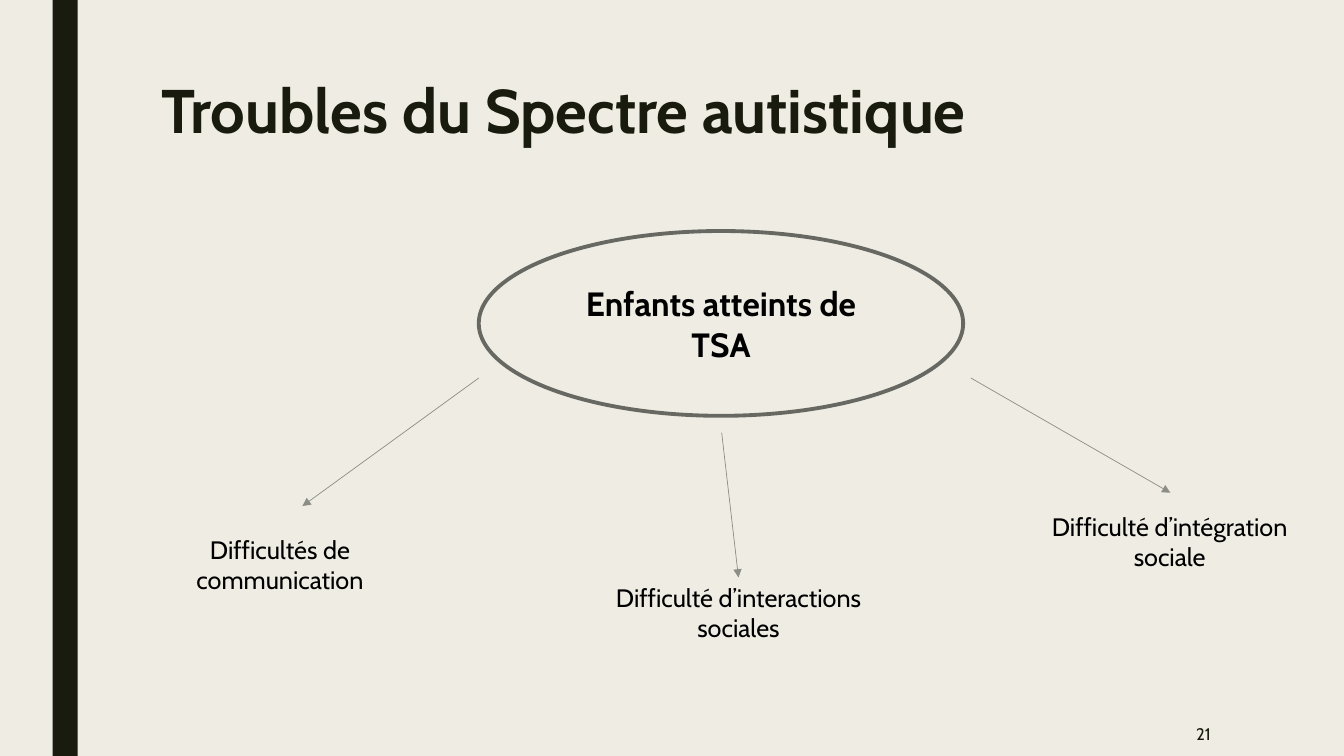
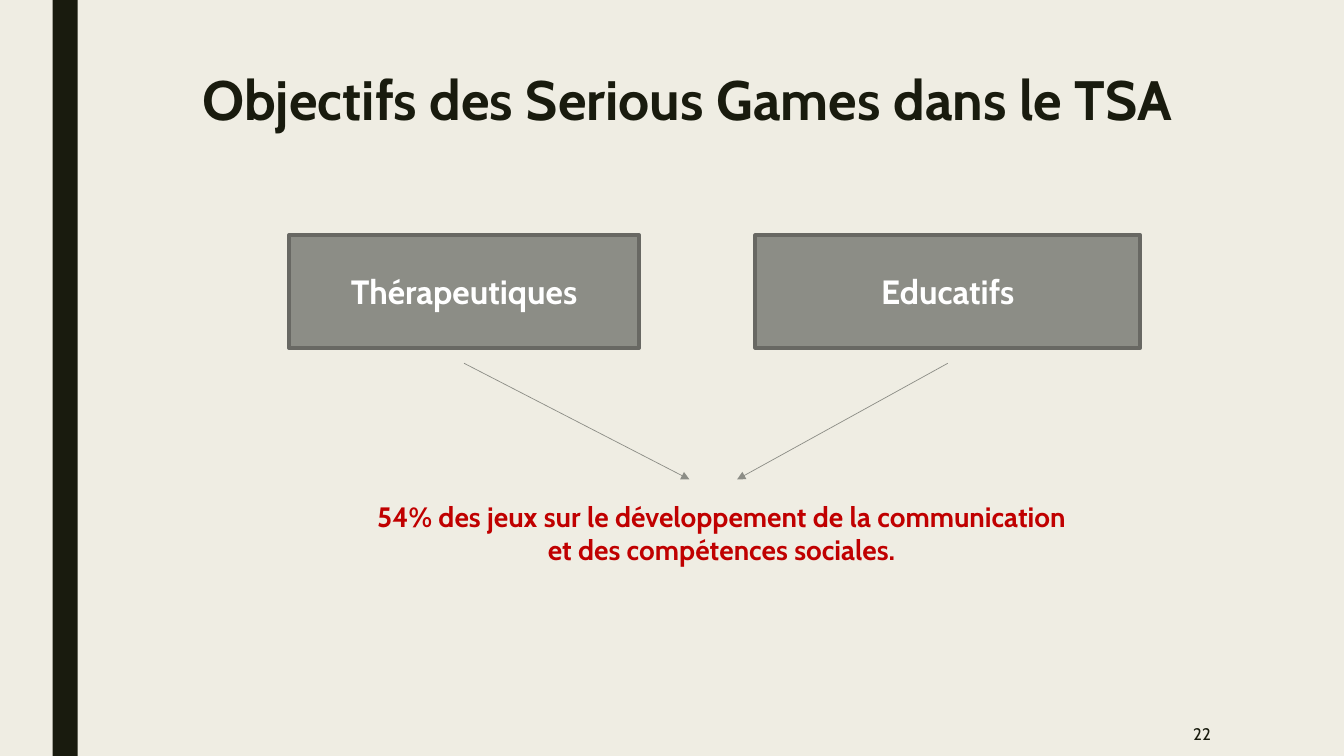
from dataclasses import dataclass

from lxml import etree
from pptx import Presentation
from pptx.dml.color import RGBColor
from pptx.enum import shapes, text
from pptx.oxml import ns
from pptx.util import Pt


@dataclass(frozen=True)
class Theme:
    font: str = "Cabin"
    paper: str = "EFEDE3"
    dark: str = "191B0E"
    grey: str = "8C8D86"
    outline: str = "686863"
    black: str = "000000"
    white: str = "FFFFFF"
    red: str = "C00000"
    title_size: float = 44
    small_title_size: float = 39.6
    heading_size: float = 24
    message_size: float = 20
    label_size: float = 18
    number_size: float = 12
    outline_width: float = 2.75
    arrow_width: float = 0.5


THEME = Theme()
PAGE_WIDTH, PAGE_HEIGHT = 960, 540
LEFT, CENTER, RIGHT = text.PP_ALIGN.LEFT, text.PP_ALIGN.CENTER, text.PP_ALIGN.RIGHT
TOP, MIDDLE = text.MSO_ANCHOR.TOP, text.MSO_ANCHOR.MIDDLE
OVAL, RECTANGLE = shapes.MSO_SHAPE.OVAL, shapes.MSO_SHAPE.RECTANGLE


def color(value):
    return RGBColor.from_string(value)


# Text
def write(box, words, size, ink=THEME.black, bold=False, align=CENTER,
          anchor=TOP, spacing=None):
    frame = box.text_frame
    frame.word_wrap = True
    frame.auto_size = text.MSO_AUTO_SIZE.NONE
    frame.vertical_anchor = anchor
    para = frame.paragraphs[0]
    para.alignment = align
    para.line_spacing = spacing
    span = para.add_run()
    span.text = words
    span.font.name = THEME.font
    span.font.size = Pt(size)
    span.font.bold = bold
    span.font.color.rgb = color(ink)


def add_label(page, words, left, top, width, height, **style):
    box = page.shapes.add_textbox(Pt(left), Pt(top), Pt(width), Pt(height))
    write(box, words, **style)


# Shapes and arrows
def add_figure(page, kind, left, top, width, height, fill=None, line=None):
    figure = page.shapes.add_shape(kind, Pt(left), Pt(top), Pt(width), Pt(height))
    figure.shadow.inherit = False
    if fill:
        figure.fill.solid()
        figure.fill.fore_color.rgb = color(fill)
    else:
        figure.fill.background()
    if line:
        figure.line.color.rgb = color(line)
        figure.line.width = Pt(THEME.outline_width)
    else:
        figure.line.fill.background()
    return figure


def add_arrow(page, start, end):
    arrow = page.shapes.add_connector(
        shapes.MSO_CONNECTOR.STRAIGHT, *(Pt(value) for value in start + end))
    arrow.line.color.rgb = color(THEME.grey)
    arrow.line.width = Pt(THEME.arrow_width)
    properties = arrow.element.spPr
    line = properties.find(ns.qn("a:ln"))
    etree.SubElement(line, ns.qn("a:tailEnd"), type="triangle")
    etree.SubElement(properties, ns.qn("a:effectLst"))


# Shared page: band, title and page number
def add_page(deck, title, number, left, top, size):
    page = deck.slides.add_slide(deck.slide_layouts[5])
    add_figure(page, RECTANGLE, 37.5, 0, 18, PAGE_HEIGHT, fill=THEME.dark)
    box = page.shapes.title
    box.left, box.top, box.width, box.height = Pt(left), Pt(top), Pt(756), Pt(55)
    write(box, title, size, THEME.dark, bold=True, align=LEFT, spacing=0.89)
    add_label(page, str(number), 746, 508.3, 126, 31.7, size=THEME.number_size,
              ink=THEME.dark, align=RIGHT, anchor=MIDDLE)
    return page


def add_disorders(deck):
    page = add_page(deck, "Troubles du Spectre autistique", 21,
                    108, 54, THEME.title_size)
    oval = add_figure(page, OVAL, 342, 165, 346, 132, line=THEME.outline)
    write(oval, "Enfants atteints de TSA", THEME.heading_size, bold=True,
          anchor=MIDDLE)

    # Each difficulty: words, label corner, arrow start and end
    difficulties = (
        ("Difficultés de communication", (83, 378), (342, 270), (216, 361.5)),
        ("Difficulté d’interactions sociales", (410.5, 412.5), (515.5, 309), (527.5, 412.5)),
        ("Difficulté d’intégration sociale", (718.5, 361.5), (693.5, 270), (836, 352)),
    )
    for words, corner, start, end in difficulties:
        add_label(page, words, *corner, 234, 51, size=THEME.label_size)
        add_arrow(page, start, end)


def add_goals(deck):
    page = add_page(deck, "Objectifs des Serious Games dans le TSA", 22,
                    137.5, 49, THEME.small_title_size)

    # Each goal: words, left, width, end of the arrow from its middle
    goals = (("Thérapeutiques", 206.5, 250, 492.5), ("Educatifs", 539.5, 275, 526.5))
    for words, left, width, target in goals:
        box = add_figure(page, RECTANGLE, left, 168, width, 80.5,
                         fill=THEME.grey, line=THEME.outline)
        write(box, words, THEME.heading_size, THEME.white, bold=True, anchor=MIDDLE)
        add_arrow(page, (left + width / 2, 259.5), (target, 342.5))

    add_label(page, "54% des jeux sur le développement de la communication "
              "et des compétences sociales.", 255.5, 353, 520, 55.5,
              size=THEME.message_size, ink=THEME.red, bold=True)


def main():
    deck = Presentation()
    deck.slide_width, deck.slide_height = Pt(PAGE_WIDTH), Pt(PAGE_HEIGHT)
    backdrop = deck.slide_master.background.fill
    backdrop.solid()
    backdrop.fore_color.rgb = color(THEME.paper)
    add_disorders(deck)
    add_goals(deck)
    deck.save("out.pptx")


if __name__ == "__main__":
    main()
